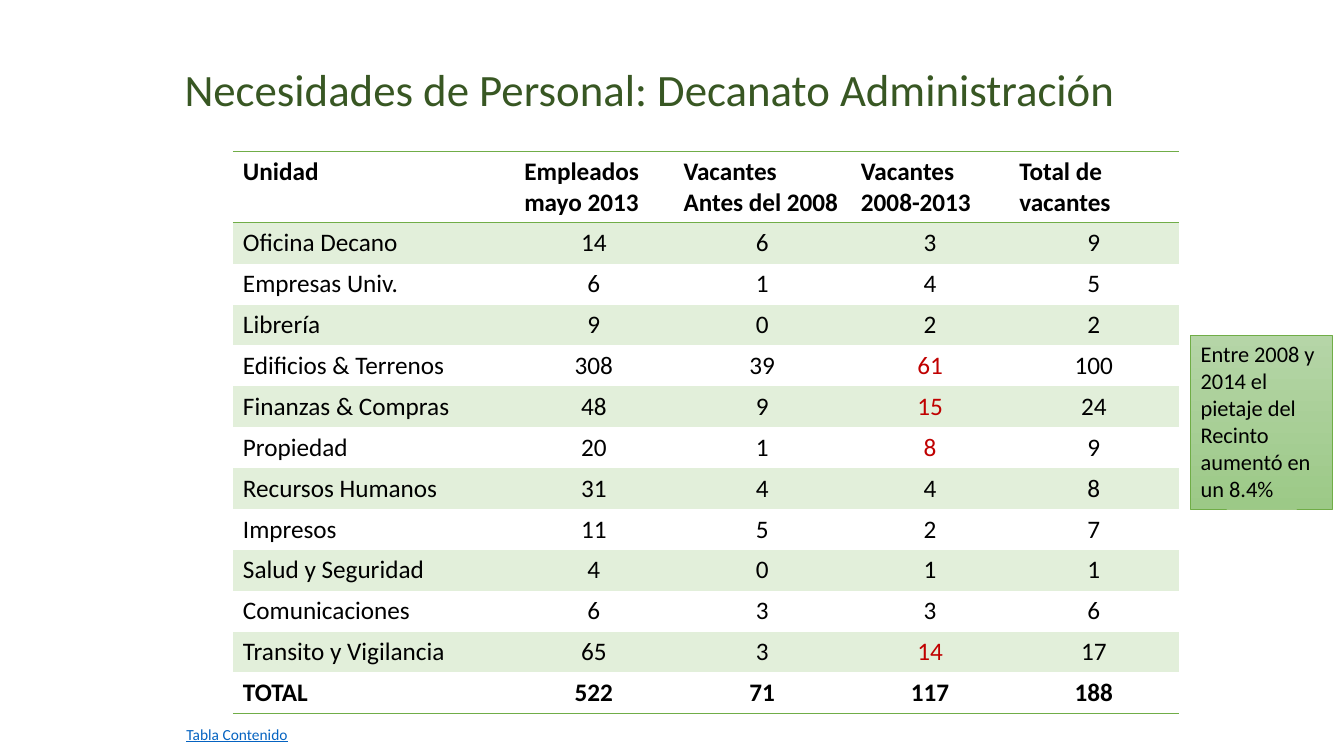
from lxml.etree import SubElement
from pptx import Presentation
from pptx.dml.color import RGBColor
from pptx.enum.shapes import MSO_SHAPE
from pptx.enum.text import MSO_ANCHOR, PP_ALIGN
from pptx.oxml.ns import qn
from pptx.util import Inches, Pt

COLORS = {
    "text": "000000",
    "title": "385723",
    "green": "70AD47",
    "band": "E2EFDA",
    "alert": "C00000",
    "link": "0563C1",
    "note_top": "B5D5A7",
    "note_bottom": "9CC987",
}
NO_STYLE = "{2D5ABB26-0587-4C30-8999-92F81FD0307C}"
COLUMN_WIDTHS = [2.79, 1.58, 1.76, 1.57, 1.68]
HEADER_HEIGHT, ROW_HEIGHT = 0.7, 0.4
RECENT_COLUMN = 3
ALERT_UNITS = {"Edificios & Terrenos", "Finanzas & Compras", "Propiedad",
               "Transito y Vigilancia"}
ROWS = [
    ["Unidad", "Empleados\nmayo 2013", "Vacantes\nAntes del 2008",
     "Vacantes\n2008-2013", "Total de vacantes"],
    ["Oficina Decano", 14, 6, 3, 9],
    ["Empresas Univ.", 6, 1, 4, 5],
    ["Librería", 9, 0, 2, 2],
    ["Edificios & Terrenos", 308, 39, 61, 100],
    ["Finanzas & Compras", 48, 9, 15, 24],
    ["Propiedad", 20, 1, 8, 9],
    ["Recursos Humanos", 31, 4, 4, 8],
    ["Impresos", 11, 5, 2, 7],
    ["Salud y Seguridad", 4, 0, 1, 1],
    ["Comunicaciones", 6, 3, 3, 6],
    ["Transito y Vigilancia", 65, 3, 14, 17],
    ["TOTAL", 522, 71, 117, 188],
]


def rgb(name):
    return RGBColor.from_string(COLORS[name])


def write(tf, text, size, color="text", bold=False, align=PP_ALIGN.LEFT):
    tf.text = text
    for p in tf.paragraphs:
        p.alignment = align
        p.font.name = "Calibri"
        p.font.size = Pt(size)
        p.font.bold = bold
        p.font.color.rgb = rgb(color)


def add_border(cell, side):
    """Draw a green rule on one side of a cell: lnT or lnB."""
    tc_pr = cell._tc.get_or_add_tcPr()
    ln = SubElement(tc_pr, qn(f"a:{side}"), w=str(Pt(1)))
    fill = SubElement(ln, qn("a:solidFill"))
    SubElement(fill, qn("a:srgbClr"), val=COLORS["green"])


def add_title(s, text):
    title = s.shapes.title
    title.left, title.top = Inches(1.73), Inches(0.56)
    title.width, title.height = Inches(9.48), Inches(0.64)
    tf = title.text_frame
    tf.word_wrap = True
    tf.vertical_anchor = MSO_ANCHOR.TOP
    write(tf, text, 32, "title")


def format_cell(cell, row, col):
    last = len(ROWS) - 1
    is_header = row == 0
    is_alert = col == RECENT_COLUMN and ROWS[row][0] in ALERT_UNITS
    write(cell.text_frame, str(ROWS[row][col]), 18,
          color="alert" if is_alert else "text",
          bold=row in (0, last),
          align=PP_ALIGN.LEFT if is_header or col == 0 else PP_ALIGN.CENTER)
    if is_header:
        add_border(cell, "lnT")
    if row in (0, last):
        add_border(cell, "lnB")
    if row % 2:
        cell.fill.solid()
        cell.fill.fore_color.rgb = rgb("band")
    else:
        cell.fill.background()


def add_staff_table(s):
    height = HEADER_HEIGHT + ROW_HEIGHT * (len(ROWS) - 1)
    frame = s.shapes.add_table(len(ROWS), len(COLUMN_WIDTHS), Inches(2.31), Inches(1.5),
                               Inches(sum(COLUMN_WIDTHS)), Inches(height))
    table = frame.table
    table._tbl.tblPr.find(qn("a:tableStyleId")).text = NO_STYLE
    for column, width in zip(table.columns, COLUMN_WIDTHS):
        column.width = Inches(width)
    for i, row in enumerate(table.rows):
        row.height = Inches(ROW_HEIGHT if i else HEADER_HEIGHT)
        for j, cell in enumerate(row.cells):
            format_cell(cell, i, j)


def add_note(s, text):
    sp = s.shapes.add_shape(MSO_SHAPE.RECTANGLE, Inches(11.81), Inches(3.33),
                            Inches(1.41), Inches(1.72))
    sp.shadow.inherit = False
    sp.fill.gradient()
    sp.fill.gradient_angle = 270
    for stop, color in zip(sp.fill.gradient_stops, ("note_top", "note_bottom")):
        stop.color.rgb = rgb(color)
    sp.line.color.rgb = rgb("green")
    sp.line.width = Pt(0.5)
    tf = sp.text_frame
    tf.word_wrap = True
    tf.vertical_anchor = MSO_ANCHOR.TOP
    write(tf, text, 16)


def add_contents_label(s, text):
    box = s.shapes.add_textbox(Inches(1.75), Inches(7.14), Inches(1.22), Inches(0.29))
    tf = box.text_frame
    write(tf, text, 11, "link")
    tf.paragraphs[0].font.underline = True


def main():
    prs = Presentation()
    prs.slide_width, prs.slide_height = Inches(13.33), Inches(7.5)
    s = prs.slides.add_slide(prs.slide_layouts[5])
    add_title(s, "Necesidades de Personal: Decanato Administración")
    add_staff_table(s)
    add_note(s, "Entre 2008 y 2014 el pietaje del Recinto aumentó en un 8.4%")
    add_contents_label(s, "Tabla Contenido")
    prs.save("out.pptx")


if __name__ == "__main__":
    main()
